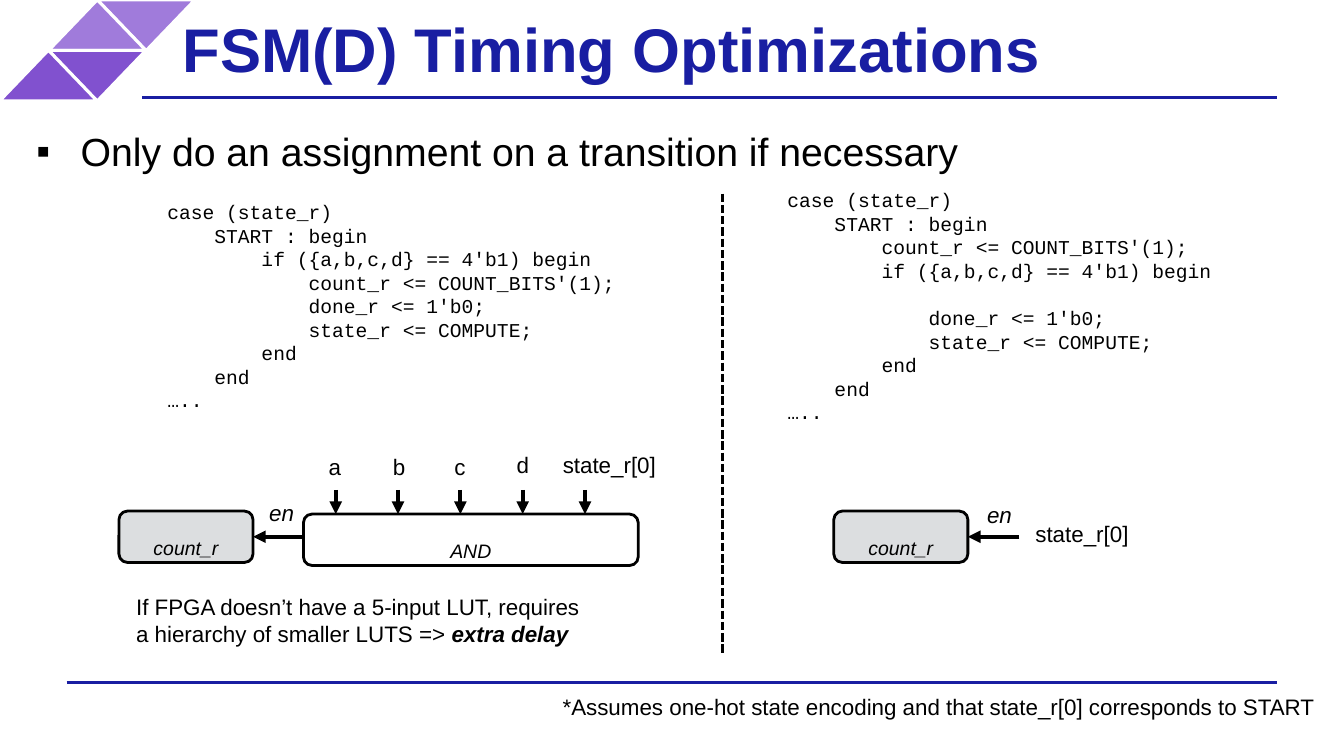
from lxml.etree import SubElement
from pptx import Presentation
from pptx.dml.color import RGBColor
from pptx.enum.dml import MSO_LINE_DASH_STYLE as Dash
from pptx.enum.shapes import MSO_CONNECTOR as Connector, MSO_SHAPE as Shape
from pptx.enum.text import MSO_ANCHOR as Anchor, MSO_AUTO_SIZE as AutoSize, PP_ALIGN as Align
from pptx.oxml.ns import qn
from pptx.util import Inches, Pt

COLORS = {"navy": "191EA2", "lilac": "A07BDB", "violet": "8151CF",
          "gray": "DCDEE0", "black": "000000", "white": "FFFFFF"}

GUARDED_CODE = """case (state_r)
    START : begin
        if ({a,b,c,d} == 4'b1) begin
            count_r <= COUNT_BITS'(1);
            done_r <= 1'b0;
            state_r <= COMPUTE;
        end
    end
….."""

HOISTED_CODE = """case (state_r)
    START : begin
        count_r <= COUNT_BITS'(1);
        if ({a,b,c,d} == 4'b1) begin

            done_r <= 1'b0;
            state_r <= COMPUTE;
        end
    end
….."""


def rgb(name):
    return RGBColor.from_string(COLORS[name])


def format_run(run, size, font="Arial", color="black", bold=None, italic=None, baseline=None):
    run.font.size, run.font.name = Pt(size), font
    run.font.bold, run.font.italic = bold, italic
    run.font.color.rgb = rgb(color)
    if baseline:
        run._r.get_or_add_rPr().set("baseline", str(baseline * 1000))


def write(frame, text, inset=0.06, inset_y=None, anchor=Anchor.MIDDLE, align=Align.LEFT, **style):
    """Fill a text frame, one paragraph for each line of text."""
    frame.word_wrap = True
    frame.vertical_anchor = anchor
    frame.margin_left = frame.margin_right = Inches(inset)
    frame.margin_top = frame.margin_bottom = Inches(inset if inset_y is None else inset_y)
    for number, line in enumerate(text.split("\n")):
        paragraph = frame.add_paragraph() if number else frame.paragraphs[0]
        paragraph.alignment = align
        run = paragraph.add_run()
        run.text = line
        format_run(run, **style)


def add_label(slide, text, left, top, width, height=0.38, grow=True, size=16, **style):
    label = slide.shapes.add_textbox(Inches(left), Inches(top), Inches(width), Inches(height))
    write(label.text_frame, text, size=size, **style)
    if grow:
        label.text_frame.auto_size = AutoSize.SHAPE_TO_FIT_TEXT
    return label


def add_line(slide, start, end, color="black", width=2, dash=None, arrow=False):
    points = [Inches(value) for value in (*start, *end)]
    line = slide.shapes.add_connector(Connector.STRAIGHT, *points)
    line.line.color.rgb = rgb(color)
    line.line.width = Pt(width)
    if dash:
        line.line.dash_style = dash
    if arrow:
        SubElement(line.line._get_or_add_ln(), qn("a:tailEnd"), type="triangle")
    SubElement(line._element.spPr, qn("a:effectLst"))
    return line


def add_box(slide, kind, left, top, width, height, fill=None, outline="black"):
    box = slide.shapes.add_shape(kind, Inches(left), Inches(top), Inches(width), Inches(height))
    box.shadow.inherit = False
    if fill:
        box.fill.solid()
        box.fill.fore_color.rgb = rgb(fill)
    else:
        box.fill.background()
    box.line.color.rgb = rgb(outline)
    box.line.width = Pt(2)
    return box


def add_block(slide, name, left, top, width, fill=None):
    block = add_box(slide, Shape.ROUNDED_RECTANGLE, left, top, width, 0.51, fill)
    write(block.text_frame, name, inset_y=0, anchor=Anchor.TOP, align=Align.CENTER,
          size=24, italic=True, baseline=-25)
    return block


def add_header(slide, left, top):
    # Ornament of four triangles, then title and rule
    for column, row, turn in ((2, 0, 180), (1, 0, 0), (1, 1, 180), (0, 1, 0)):
        triangle = add_box(slide, Shape.ISOSCELES_TRIANGLE, left + 0.485 * column, top + 0.5 * row,
                           0.96, 0.5, ("lilac", "violet")[row], "white")
        triangle.rotation = turn
    add_line(slide, (left + 1.41, top + 0.97), (left + 12.67, top + 0.97), "navy")
    add_label(slide, "FSM(D) Timing Optimizations", left + 1.67, top, 10.3, 0.95,
              grow=False, inset=0.14, size=44, color="navy", bold=True)


def add_bullet(slide, left, top, width):
    point = slide.shapes.add_textbox(Inches(left), Inches(top), Inches(width), Inches(0.5))
    properties = point.text_frame.paragraphs[0]._p.get_or_add_pPr()
    properties.set("marL", str(Inches(0.5)))
    properties.set("indent", str(Inches(-0.44)))
    SubElement(properties, qn("a:buFont"), typeface="Arial")
    SubElement(properties, qn("a:buChar"), char="▪")
    write(point.text_frame, "Only do an assignment on a transition if necessary",
          inset=0, anchor=Anchor.TOP, size=28)


def add_code(slide, code, left, top):
    add_label(slide, code, left, top, 5, 2.23, size=14, font="Courier New")


def add_register(slide, left, top):
    """Draw the count_r register with its enable arrow."""
    register = add_block(slide, "count_r", left, top, 1.33, "gray")
    enable = add_line(slide, (left + 1.84, top + 0.255), (left + 1.33, top + 0.255),
                      width=3, arrow=True)
    enable.end_connect(register, 3)


def add_guarded_side(slide, left, top):
    add_code(slide, GUARDED_CODE, left + 0.42, top)

    # Register enabled by an AND of five inputs
    add_register(slide, left, top + 3.15)
    add_label(slide, "en", left + 1.43, top + 2.97, 0.41, italic=True)
    add_block(slide, "AND", left + 1.83, top + 3.18, 3.32)
    for number, (name, offset, rise, width) in enumerate((
            ("a", -0.13, 0, 0.27), ("b", -0.11, 0, 0.27), ("c", -0.12, 0, 0.27),
            ("d", -0.12, 0.02, 0.27), ("state_r[0]", -0.28, 0.02, 1.33))):
        x = left + 2.15 + 0.618 * number
        add_label(slide, name, x + offset, top + 2.52 - rise, width)
        add_line(slide, (x, top + 2.94), (x, top + 3.18), width=3, arrow=True)

    # Cost of the wide AND
    cost = add_label(slide, "If FPGA doesn’t have a 5-input LUT, requires "
                     "a hierarchy of smaller LUTS => ", left + 0.11, top + 3.91, 4.66, 0.65)
    delay = cost.text_frame.paragraphs[0].add_run()
    delay.text = "extra delay"
    format_run(delay, 16, bold=True, italic=True)


def add_hoisted_side(slide, left, top):
    add_code(slide, HOISTED_CODE, left, top)
    add_register(slide, left + 0.52, top + 3.15)
    add_label(slide, "en", left + 1.98, top + 2.99, 0.41, italic=True)
    add_label(slide, "state_r[0]", left + 2.46, top + 3.18, 1.33)


def add_footer(slide, left, top):
    add_line(slide, (left, top), (left + 12.01, top), "navy")
    add_label(slide, "*Assumes one-hot state encoding and that state_r[0] corresponds to START",
              left + 4.86, top + 0.05, 7.85)


def main():
    deck = Presentation()
    deck.slide_width, deck.slide_height = Inches(13.33), Inches(7.5)
    slide = deck.slides.add_slide(deck.slide_layouts[6])
    add_header(slide, 0, 0)
    add_bullet(slide, 0.3, 1.26, 12.75)
    add_guarded_side(slide, 1.18, 1.92)
    add_line(slide, (7.17, 1.92), (7.17, 6.5), dash=Dash.SQUARE_DOT)
    add_hoisted_side(slide, 7.75, 1.92)
    add_footer(slide, 0.66, 6.77)
    deck.save("out.pptx")


if __name__ == "__main__":
    main()
